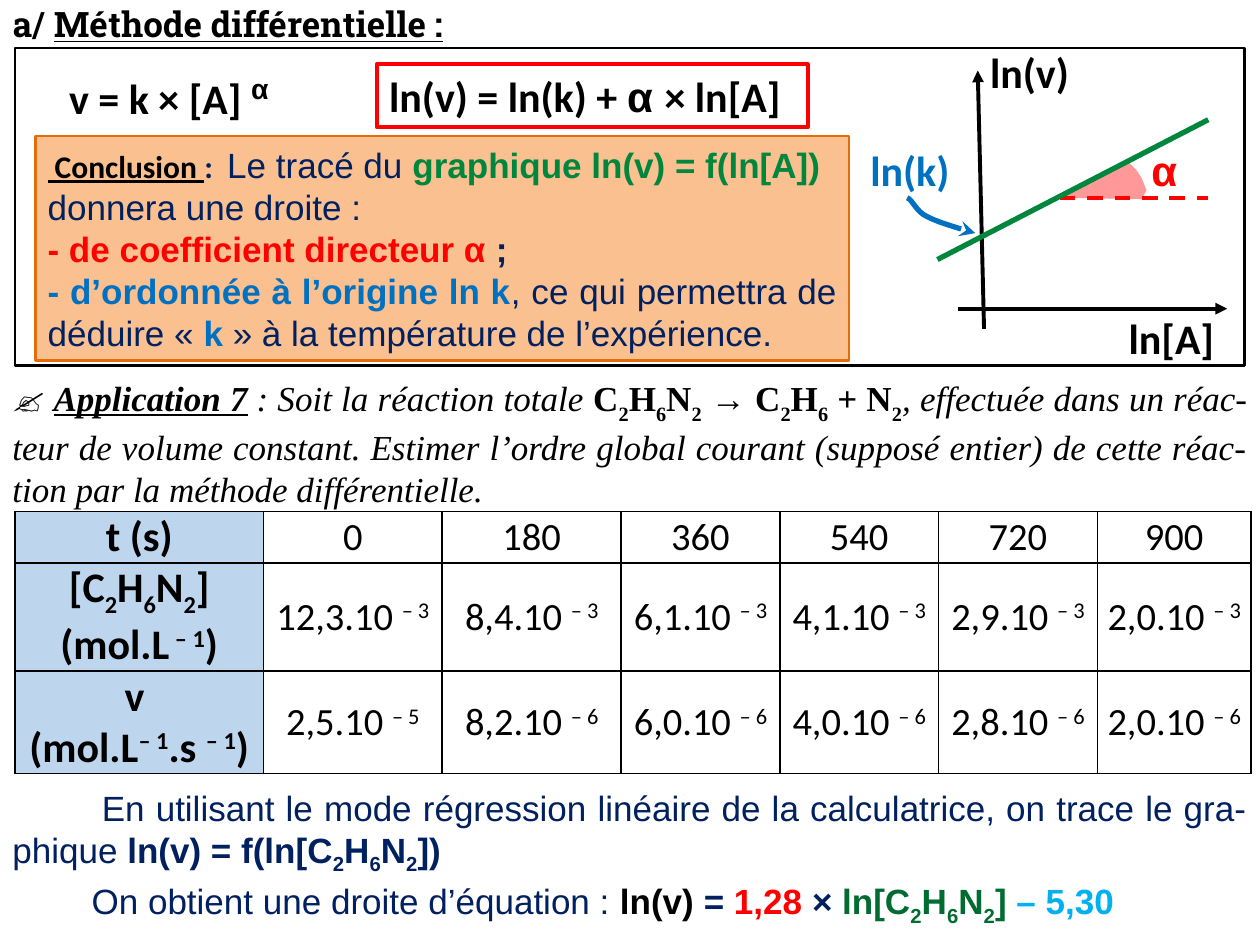
import pptx
import pptx.dml.color
import pptx.enum.dml
import pptx.enum.shapes
import pptx.enum.text
import pptx.oxml
import pptx.oxml.ns
import pptx.util
from pptx.util import Inches

COLORS = {
    "black": "000000", "red": "FF0000", "green": "00863D", "dark green": "006C31",
    "blue": "0070C0", "sky": "00B0F0", "navy": "002060", "peach": "FAC090",
    "orange": "E46C0A", "header": "BDD6EE",
}
ALIGN = pptx.enum.text.PP_ALIGN
ANCHOR = pptx.enum.text.MSO_ANCHOR
SHAPE = pptx.enum.shapes.MSO_SHAPE
ETHANE = "C_2_H_6_"
REACTANT = ETHANE + "N_2_"


def rgb(color):
    return pptx.dml.color.RGBColor.from_string(COLORS[color])


def add_xml(parent, tag, **attributes):
    child = pptx.oxml.parse_xml(f"<a:{tag} {pptx.oxml.ns.nsdecls('a')}/>")
    for name, value in attributes.items():
        child.set(name, str(value))
    parent.append(child)
    return child


def write(para, text, font="Calibri", size=24, color="black", bold=False,
          italic=False, underline=False, low=-25, high=30):
    """Add text; _x_ marks a subscript and ^x^ a superscript."""
    shift = 0
    for piece in text.replace("_", "\n_\n").replace("^", "\n^\n").split("\n"):
        if piece in ("_", "^"):
            shift = 0 if shift else (low if piece == "_" else high)
        elif piece:
            span = para.add_run()
            span.text = piece
            span.font.name = font
            span.font.size = pptx.util.Pt(size)
            span.font.bold, span.font.italic = bold, italic
            span.font.underline = underline
            span.font.color.rgb = rgb(color)
            if shift:
                span._r.get_or_add_rPr().set("baseline", str(shift * 1000))


class SlideBuilder:
    def __init__(self, page):
        self.page = page

    def fill_text(self, frame, paragraphs, anchor=ANCHOR.TOP, wrap=True,
                  align=ALIGN.LEFT, indent=0, **style):
        """Each paragraph is a list of (text, format changes)."""
        frame.word_wrap = wrap
        frame.vertical_anchor = anchor
        frame.auto_size = pptx.enum.text.MSO_AUTO_SIZE.NONE
        for index, spans in enumerate(paragraphs):
            para = frame.add_paragraph() if index else frame.paragraphs[0]
            para.alignment = align[index] if isinstance(align, list) else align
            if indent:
                para._p.get_or_add_pPr().set("indent", str(Inches(indent)))
            for text, changes in spans:
                write(para, text, **{**style, **changes})

    def title(self, place, paragraphs, **style):
        box = self.page.shapes.title
        box.left, box.top, box.width, box.height = map(Inches, place)
        self.fill_text(box.text_frame, paragraphs, **style)

    def text(self, place, paragraphs, **style):
        box = self.page.shapes.add_textbox(*map(Inches, place))
        self.fill_text(box.text_frame, paragraphs, **style)

    def label(self, place, text, **style):
        self.text(place, [[(text, {})]], bold=True, **style)

    def paint(self, shape, fill=None, line=None, width=1.5):
        shape.shadow.inherit = False
        for part, color in ((shape.fill, fill), (shape.line.fill, line)):
            if color:
                part.solid()
                part.fore_color.rgb = rgb(color)
            else:
                part.background()
        if line:
            shape.line.width = pptx.util.Pt(width)

    def frame(self, place, paragraphs=(), fill=None, line="black", width=1.5, **style):
        box = self.page.shapes.add_shape(SHAPE.RECTANGLE, *map(Inches, place))
        self.paint(box, fill, line, width)
        self.fill_text(box.text_frame, paragraphs, anchor=ANCHOR.MIDDLE, **style)

    def line(self, start, end, color="black", width=2.25, arrow=None, dash=False):
        line = self.page.shapes.add_connector(
            pptx.enum.shapes.MSO_CONNECTOR.STRAIGHT, *map(Inches, start + end))
        line.line.color.rgb = rgb(color)
        line.line.width = pptx.util.Pt(width)
        if dash:
            line.line.dash_style = pptx.enum.dml.MSO_LINE.DASH
        if arrow:
            add_xml(line.line._get_or_add_ln(), "tailEnd", type=arrow)
        add_xml(line._element.spPr, "effectLst")

    def outline(self, points, close=True, alpha=None, arrow=None, **paint):
        points = [(Inches(x), Inches(y)) for x, y in points]
        builder = self.page.shapes.build_freeform(*points[0])
        builder.add_line_segments(points[1:], close=close)
        shape = builder.convert_to_shape()
        self.paint(shape, **paint)
        if alpha:
            color = shape._element.spPr.find(".//" + pptx.oxml.ns.qn("a:srgbClr"))
            add_xml(color, "alpha", val=alpha * 1000)
        if arrow:
            add_xml(shape.line._get_or_add_ln(), "tailEnd", type=arrow)

    def table(self, place, widths, heights, rows):
        table = self.page.shapes.add_table(
            len(rows), len(widths), *map(Inches, place)).table
        table.first_row = table.horz_banding = False
        for column, width in zip(table.columns, widths):
            column.width = Inches(width)
        for row, height in zip(table.rows, heights):
            row.height = Inches(height)
        for row_index, row in enumerate(rows):
            for column_index, text in enumerate(row):
                self.cell(table.cell(row_index, column_index), text, column_index == 0)

    def cell(self, cell, text, header):
        cell.margin_left = cell.margin_right = Inches(0.07)
        cell.margin_top = cell.margin_bottom = 0
        for side in ("lnL", "lnR", "lnT", "lnB"):
            border = add_xml(cell._tc.get_or_add_tcPr(), side, w=pptx.util.Pt(1))
            add_xml(add_xml(border, "solidFill"), "srgbClr", val=COLORS["black"])
        if header:
            cell.fill.solid()
            cell.fill.fore_color.rgb = rgb("header")
        else:
            cell.fill.background()
        cell.vertical_anchor = ANCHOR.MIDDLE
        for index, part in enumerate(text.split("\n")):
            para = cell.text_frame.add_paragraph() if index else cell.text_frame.paragraphs[0]
            para.alignment = ALIGN.CENTER
            write(para, part, size=24 if header else 22, bold=header)


def curve(start, one, two, end, steps=8):
    """Points along a cubic curve."""
    return [tuple((1 - t) ** 3 * a + 3 * (1 - t) ** 2 * t * b
                  + 3 * (1 - t) * t ** 2 * c + t ** 3 * d
                  for a, b, c, d in zip(start, one, two, end))
            for t in (step / steps for step in range(steps + 1))]


def main():
    deck = pptx.Presentation()
    deck.slide_width, deck.slide_height = Inches(10), Inches(7.5)
    slide = SlideBuilder(deck.slides.add_slide(deck.slide_layouts[5]))
    bold, plain = {"bold": True}, {}

    # Title and method frame
    slide.title((0, -0.03, 4.06, 0.44),
                [[("a/ ", plain), ("Méthode différentielle\u00a0:", {"underline": True})]],
                font="Roboto Slab", size=20, bold=True, anchor=ANCHOR.MIDDLE, wrap=False)
    slide.frame((0.12, 0.38, 9.76, 2.52))

    # Rate laws
    slide.text((0.43, 0.47, 1.82, 0.57),
               [[("v = k × [A] ", plain), ("^α^", {"font": "Arial", "size": 28})]],
               bold=True, wrap=False, align=ALIGN.CENTER)
    slide.frame((2.99, 0.51, 3.42, 0.5),
                [[("ln(v) = ln(k) + ", plain), ("α ", {"font": "Arial"}), ("× ln[A]", plain)]],
                line="red", width=2.25, bold=True)

    # Graph: axes, angle, straight line, intercept
    slide.line((7.6, 2.45), (9.74, 2.45), arrow="triangle")
    slide.line((7.81, 2.61), (7.76, 0.56), arrow="triangle")
    slide.label((8.86, 2.43, 0.93, 0.32), "ln[A]")
    slide.label((7.76, 0.32, 0.87, 0.33), "ln(v)")
    slide.line((8.41, 1.57), (9.59, 1.57), color="red", dash=True)
    slide.outline([(8.94, 1.27), (8.4, 1.57), (9.06, 1.58), (9.1, 1.51),
                   (9.06, 1.41), (9.02, 1.35)], fill="red", alpha=40)
    slide.line((9.59, 0.95), (7.44, 2.06), color="green", width=3)
    slide.label((9.04, 1.1, 0.41, 0.5), "α", font="Arial", color="red", wrap=False)
    slide.label((6.81, 1.1, 0.84, 0.5), "ln(k)", color="blue", wrap=False)
    bend = (7.36, 1.72)
    slide.outline(curve((7.2, 1.57), (7.24, 1.58), (7.27, 1.68), bend)
                  + curve(bend, (7.45, 1.77), (7.74, 1.85), (7.74, 1.85))[1:],
                  close=False, line="blue", width=3, arrow="stealth")

    # Conclusion
    heading = {"font": "Calibri", "size": 18, "bold": True}
    blue = {"color": "blue", "bold": True}
    slide.frame((0.28, 1.08, 6.46, 1.78), [
        [(" Conclusion ", {**heading, "color": "black", "underline": True}),
         (":  ", heading), ("Le tracé du ", plain),
         ("graphique ln(v) = f(ln[A]) ", {"color": "green", "bold": True}),
         ("donnera une droite :", plain)],
        [("- de coefficient directeur α ", {"color": "red", "bold": True}), ("; ", bold)],
        [("- d’ordonnée à l’origine ln k", blue),
         (", ce qui permettra de déduire «\u00a0", plain), ("k", blue),
         ("\u00a0» à la température de l’expérience. ", plain)],
    ], fill="peach", line="orange", font="Arial", size=20, color="navy",
        align=[ALIGN.LEFT, ALIGN.JUSTIFY, ALIGN.JUSTIFY])

    # Exercise
    upright = {"bold": True, "italic": False}
    slide.text((0, 2.96, 10, 1.11), [[
        ("✍ ", upright), ("Application 7", {"bold": True, "underline": True}),
        ("\u00a0: Soit la réaction totale ", plain),
        (f"{REACTANT} → {ETHANE} + N_2_", upright),
        (", effectuée dans un réac-teur de volume constant. Estimer l’ordre global "
         "courant (supposé entier) de cette réac-tion par la méthode différentielle.", plain),
    ]], font="Times New Roman", size=20, italic=True, low=-30,
        anchor=ANCHOR.MIDDLE, align=ALIGN.JUSTIFY)

    # Measurements
    concentrations = ["12,3", "8,4", "6,1", "4,1", "2,9", "2,0"]
    rates = [("2,5", 5), ("8,2", 6), ("6,0", 6), ("4,0", 6), ("2,8", 6), ("2,0", 6)]
    slide.table((0.12, 4.06, 9.81, 2.06), [1.97, 1.42, 1.42, 1.26, 1.26, 1.26, 1.22],
                [0.4, 0.86, 0.8], [
        ["t (s)"] + [str(time) for time in range(0, 901, 180)],
        [f"[{REACTANT}] (mol.L^ – 1^)"] + [f"{value}.10 ^– 3^" for value in concentrations],
        ["v \n(mol.L^– 1^.s ^– 1^)"] + [f"{value}.10 ^– {power}^" for value, power in rates],
    ])

    # Regression
    result = {"font": "Arial", "size": 20, "color": "navy"}
    slide.text((0, 6.19, 10, 0.77), [[
        ("En utilisant le mode régression linéaire de la calculatrice, "
         "on trace le gra-phique ", plain),
        (f"ln(v) = f(ln[{REACTANT}])", bold),
    ]], align=ALIGN.JUSTIFY, indent=0.71, **result)
    slide.text((0.12, 6.93, 9.25, 0.44), [[
        (" On obtient une droite d’équation :\u00a0", {"bold": False}),
        ("ln(v) ", {"color": "black"}), ("=", plain), (" 1,28 ", {"color": "red"}),
        ("× ", plain), (f"ln[{REACTANT}] ", {"color": "dark green"}),
        ("– 5,30", {"color": "sky"}),
    ]], align=ALIGN.CENTER, bold=True, **result)

    deck.save("out.pptx")


if __name__ == "__main__":
    main()
